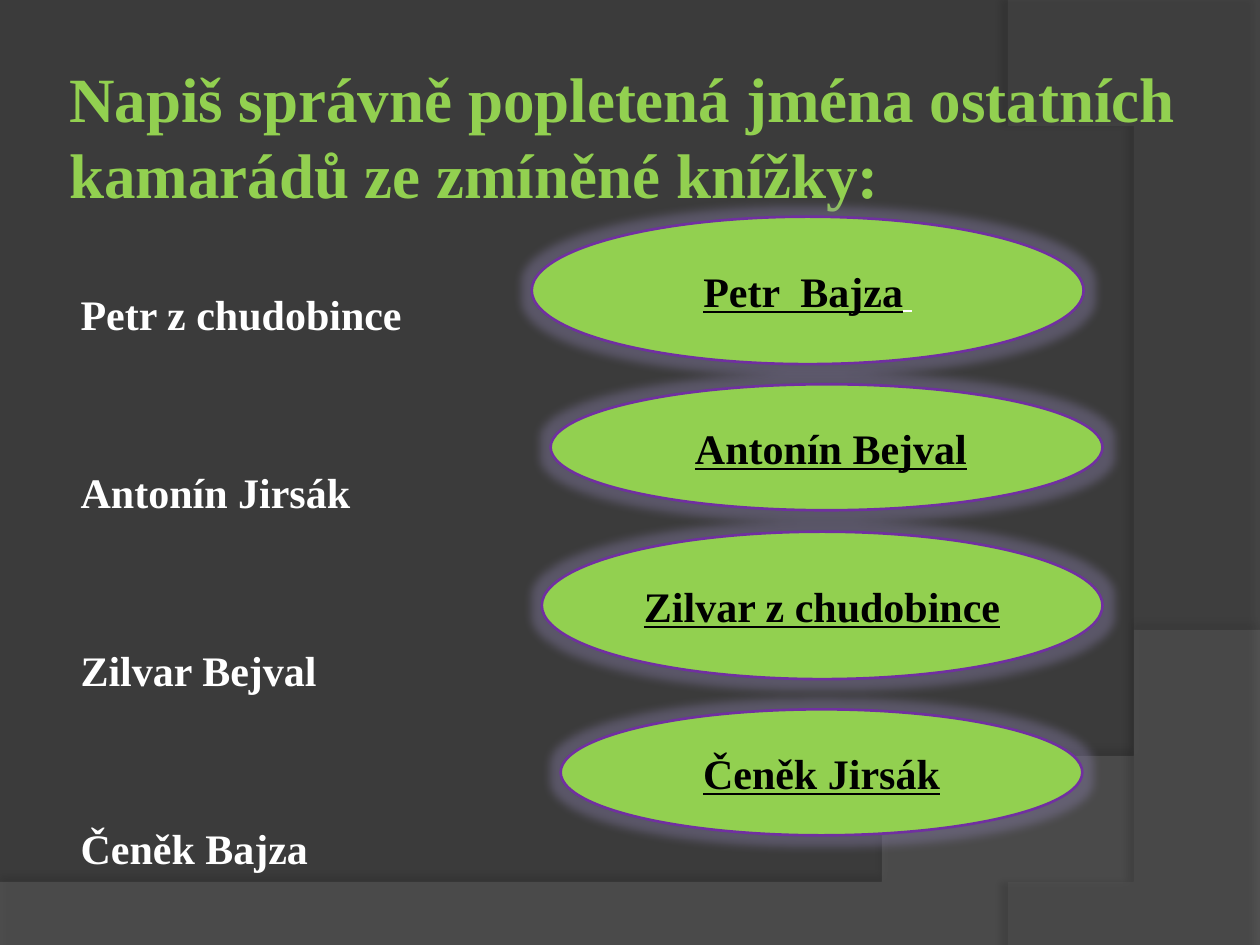
"""Build a quiz slide about mixed-up names with answers in ellipses."""
from lxml import etree
from pptx import Presentation
from pptx.dml.color import RGBColor
from pptx.enum.shapes import MSO_SHAPE
from pptx.enum.text import MSO_ANCHOR, PP_ALIGN
from pptx.oxml.ns import qn
from pptx.util import Inches, Pt

OVAL = MSO_SHAPE.OVAL
MIDDLE = MSO_ANCHOR.MIDDLE
CENTER = PP_ALIGN.CENTER
SERIF, SANS = "Times New Roman", "Arial"

COLORS = {
    "back": "3B3B3B", "hill": "7F7F7F", "arc": "5E5E5E", "green": "92D050",
    "purple": "7030A0", "glow": "8A80AC", "white": "FFFFFF", "black": "000000",
}
TITLE = "Napiš správně popletená jména ostatních kamarádů ze zmíněné knížky:"
MIXED_NAMES = ["Petr z chudobince", "Antonín Jirsák", "Zilvar Bejval", "Čeněk Bajza"]
ANSWERS = [
    ("", "Petr  Bajza", " ", (4.22, 1.72, 4.38, 1.17)),
    ("", "Zilvar z chudobince", "", (4.3, 4.22, 4.45, 1.17)),
    ("", "Čeněk Jirsák", "", (4.45, 5.63, 4.14, 1)),
    (" ", "Antonín Bejval", "", (4.37, 3.05, 4.38, 1)),
]
HILL_CURVE = [(10, 5.2), (5.59, 7.29), (3.91, 7.19), (0, 7.05)]
HILL_CORNERS = [(0, 7.5), (10, 7.5)]
ARC_CURVE = [(8.21, 7.5), (9.35, 6.19), (10.18, 3), (8, 0)]
ARC_CORNERS = [(10, 0.02), (10, 7.5)]


def rgb(name):
    return RGBColor.from_string(COLORS[name])


def style(font, size, color, name=SERIF, bold=True, underline=None):
    font.name, font.size, font.bold, font.underline = name, Pt(size), bold, underline
    font.color.rgb = rgb(color)


def add_alpha(color_node, percent):
    etree.SubElement(color_node, qn("a:alpha"), val=str(percent * 1000))


def add_effect(shape, kind, color, percent, **settings):
    shape.shadow.inherit = False
    effects = shape._element.spPr.find(qn("a:effectLst"))
    effect = etree.SubElement(effects, qn(f"a:{kind}"), **settings)
    add_alpha(etree.SubElement(effect, qn("a:srgbClr"), val=COLORS[color]), percent)


def bezier(points, steps=48):
    start, first, second, end = points
    for step in range(steps + 1):
        t = step / steps
        weights = ((1 - t) ** 3, 3 * t * (1 - t) ** 2, 3 * t * t * (1 - t), t ** 3)
        yield tuple(
            sum(w * p[axis] for w, p in zip(weights, (start, first, second, end)))
            for axis in (0, 1)
        )


def add_backdrop(page, curve, corners, color, opacity, shadow_opacity, distance, angle):
    outline = list(bezier(curve)) + corners
    builder = page.shapes.build_freeform(*outline[0], scale=Inches(1))
    builder.add_line_segments(outline[1:], close=True)
    shape = builder.convert_to_shape()
    shape.fill.solid()
    shape.fill.fore_color.rgb = rgb(color)
    add_alpha(shape._element.spPr.find(qn("a:solidFill"))[0], opacity)
    shape.line.fill.background()
    add_effect(shape, "outerShdw", "black", shadow_opacity, blurRad=str(Pt(4)),
               dist=str(Pt(distance)), dir=str(angle * 60000))


def add_text(page, place, margins, lines, size, color):
    box = page.shapes.add_textbox(*map(Inches, place))
    frame = box.text_frame
    frame.word_wrap = True
    frame.margin_left, frame.margin_top, frame.margin_right, frame.margin_bottom = map(
        Inches, margins)
    frame.text = "\n".join(lines)
    for para in frame.paragraphs:
        style(para.font, size, color)
    return frame


def add_answer(page, before, name, after, place):
    oval = page.shapes.add_shape(OVAL, *map(Inches, place))
    oval.fill.solid()
    oval.fill.fore_color.rgb = rgb("green")
    oval.line.color.rgb = rgb("purple")
    oval.line.width = Pt(1.5)
    add_effect(oval, "glow", "glow", 40, rad=str(Pt(11)))
    oval.text_frame.vertical_anchor = MIDDLE
    para = oval.text_frame.paragraphs[0]
    para.alignment = CENTER
    for words in filter(None, (before, name, after)):
        span = para.add_run()
        span.text = words
        if words == name:
            style(span.font, 24, "black", underline=True)
        else:
            style(span.font, 18, "white", SANS, False, bool(after))


def main():
    deck = Presentation()
    deck.slide_width, deck.slide_height = Inches(10), Inches(7.5)
    page = deck.slides.add_slide(deck.slide_layouts[6])
    page.background.fill.solid()
    page.background.fill.fore_color.rgb = rgb("back")

    add_backdrop(page, HILL_CURVE, HILL_CORNERS, "hill", 30, 35, 3.5, 270)
    add_backdrop(page, ARC_CURVE, ARC_CORNERS, "arc", 25, 45, 4, 180)

    title = add_text(page, (0.5, 0.55, 9.03, 1), (0.05, 0.1, 0.05, 0.05),
                     [TITLE], 36, "green")
    title.vertical_anchor = MIDDLE
    title.paragraphs[0].line_spacing = Pt(43.4)

    names = add_text(page, (0.5, 2.03, 4, 4.67), (0.14, 0.26, 0.1, 0.05),
                     MIXED_NAMES, 24, "white")
    for para in names.paragraphs[1:]:
        para.space_before = Pt(73)

    for answer in ANSWERS:
        add_answer(page, *answer)
    deck.save("out.pptx")


if __name__ == "__main__":
    main()
